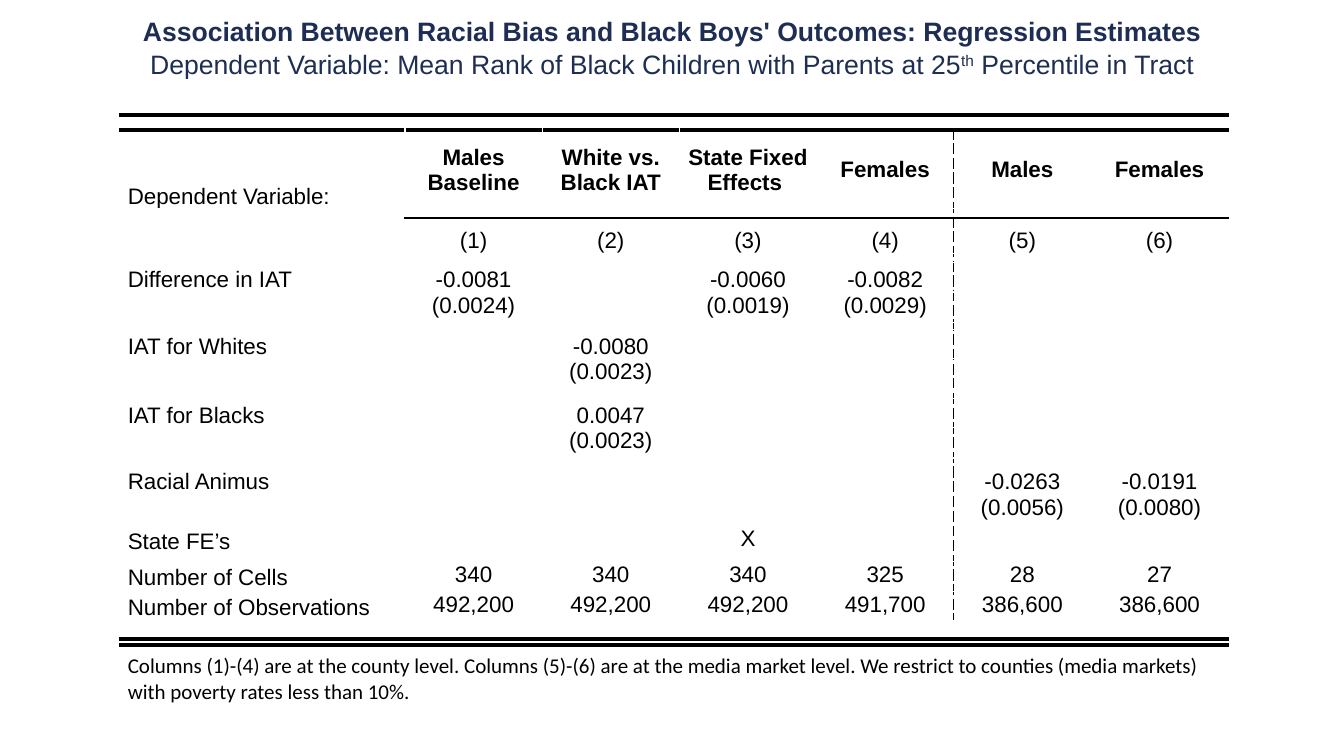
from lxml.etree import SubElement, fromstring
from pptx import Presentation
from pptx.dml.color import RGBColor
from pptx.enum.text import MSO_ANCHOR, MSO_AUTO_SIZE, PP_ALIGN
from pptx.oxml.ns import nsdecls, qn
from pptx.util import Pt

COLORS = {"navy": "1E2D53", "black": "000000", "white": "FFFFFF"}
TOP, MIDDLE, BOTTOM = MSO_ANCHOR.TOP, MSO_ANCHOR.MIDDLE, MSO_ANCHOR.BOTTOM

HEADING = "Association Between Racial Bias and Black Boys' Outcomes: Regression Estimates"
SUBHEADING = ["Dependent Variable: Mean Rank of Black Children with Parents at 25",
              "th", " Percentile in Tract"]
NOTE = ("Columns (1)-(4) are at the county level. Columns (5)-(6) are at the media market level. "
        "We restrict to counties (media markets) with poverty rates less than 10%.")

LABEL_WIDTH, VALUE_WIDTH = 203.8, 98
ESTIMATE, ERROR = 21.2, 21.6
HEADERS = ["Males\vBaseline", "White vs. Black IAT", "State Fixed Effects ",
           "Females", "Males", "Females"]
ROWS = [
    (25.2, "", TOP, {}, TOP),
    (10.8, "", TOP, {}, TOP),
    (56.2, "Dependent Variable:", BOTTOM, dict(enumerate(HEADERS, 1)), MIDDLE),
    (6.5, "", TOP, {}, TOP),
    (25.2, "", TOP, {n: f"({n})" for n in range(1, 7)}, BOTTOM),
    (6.5, "", TOP, {}, TOP),
    (ESTIMATE, "Difference in IAT", BOTTOM, {1: "-0.0081", 3: "-0.0060", 4: "-0.0082"}, BOTTOM),
    (ERROR, "", TOP, {1: "(0.0024)", 3: "(0.0019)", 4: "(0.0029)"}, TOP),
    (5, "", TOP, {}, TOP),
    (ESTIMATE, "IAT for Whites", BOTTOM, {2: "-0.0080"}, BOTTOM),
    (ERROR, "", TOP, {2: "(0.0023)"}, TOP),
    (6.5, "", TOP, {}, TOP),
    (ESTIMATE, "IAT for Blacks", BOTTOM, {2: "0.0047"}, BOTTOM),
    (ERROR, "", TOP, {2: "(0.0023)"}, TOP),
    (5, "", TOP, {}, TOP),
    (ESTIMATE, "Racial Animus", BOTTOM, {5: "-0.0263", 6: "-0.0191"}, BOTTOM),
    (ERROR, "", TOP, {5: "(0.0056)", 6: "(0.0080)"}, TOP),
    (ESTIMATE, "State FE’s", MIDDLE, {3: "X"}, TOP),
    (5, "", TOP, {}, TOP),
    (ESTIMATE, "Number of Cells", MIDDLE,
     {1: "340", 2: "340", 3: "340", 4: "325", 5: "28", 6: "27"}, TOP),
    (ESTIMATE, "Number of Observations", MIDDLE,
     {1: "492,200", 2: "492,200", 3: "492,200", 4: "491,700", 5: "386,600", 6: "386,600"}, TOP),
    (13, "", TOP, {}, TOP),
    (4.3, "", TOP, {}, TOP),
    (49, NOTE, MIDDLE, {}, TOP),
]
HEADER_ROW, RULE_ROW, NOTE_ROW = 2, 3, 23
FIRST_BODY, LAST_BODY = 2, 20
LAST_COUNTY_COLUMN = 4
THICK_RULES = (0, 21)
SPANS = {0: 3, 1: 3, 21: 3, 22: 6, 23: 6}


def apply_format(target, values):
    for name, value in values.items():
        setattr(target, name, value)


def format_run(run, color, **values):
    apply_format(run.font, values)
    run.font.color.rgb = RGBColor.from_string(COLORS[color])


def draw_borders(cell, borders):
    properties = cell._tc.get_or_add_tcPr()
    sides = [side for side in "LRTB" if side in borders]
    for position, side in enumerate(sides):
        color, width, dash = borders[side]
        properties.insert(position, fromstring(
            f'<a:ln{side} {nsdecls("a")} w="{Pt(width)}"><a:solidFill>'
            f'<a:srgbClr val="{COLORS[color]}"/></a:solidFill>'
            f'<a:prstDash val="{dash}"/></a:ln{side}>'))


def cell_borders(row, column):
    white, thin = ("white", 1, "solid"), ("black", 1, "solid")
    thick, divider = ("black", 3, "solid"), ("black", 1, "dash")
    borders = {}
    if column == 0:
        borders.update(L=white)
    if row in THICK_RULES:
        borders.update(B=thick)
    if row - 1 in THICK_RULES:
        borders.update(T=thick)
    if column > 0 and row == RULE_ROW:
        borders.update(B=thin)
    if column > 0 and row == RULE_ROW + 1:
        borders.update(T=thin)
    if FIRST_BODY <= row <= LAST_BODY:
        if column == LAST_COUNTY_COLUMN:
            borders.update(R=divider)
        if column == LAST_COUNTY_COLUMN + 1:
            borders.update(L=divider)
    return borders


def fill_cell(cell, text, anchor, row, column):
    cell.fill.solid()
    cell.fill.fore_color.rgb = RGBColor.from_string(COLORS["white"])
    side = 5.8 if column == 0 else 0.7
    upper = 0.7 if column and text else 0
    apply_format(cell, {"margin_left": Pt(side), "margin_right": Pt(side),
                        "margin_top": Pt(upper), "margin_bottom": Pt(0),
                        "vertical_anchor": anchor})
    paragraph = cell.text_frame.paragraphs[0]
    if not text:
        SubElement(paragraph._p, qn("a:endParaRPr")).set("sz", "300")
        return
    paragraph.text = text
    if column:
        paragraph.alignment = PP_ALIGN.CENTER
    elif row != NOTE_ROW:
        paragraph.line_spacing = 1.15
    font = ("Calibri", 15) if row == NOTE_ROW else ("Arial", 16)
    for run in paragraph.runs:
        format_run(run, "black", name=font[0], size=Pt(font[1]),
                   bold=row == HEADER_ROW and column > 0)


def add_estimates(slide, left, top):
    widths = [LABEL_WIDTH] + [VALUE_WIDTH] * len(HEADERS)
    estimates = slide.shapes.add_table(
        len(ROWS), len(widths), Pt(left), Pt(top),
        Pt(sum(widths)), Pt(sum(row[0] for row in ROWS))).table
    apply_format(estimates, {"first_row": False, "horz_banding": False})
    for column, width in enumerate(widths):
        estimates.columns[column].width = Pt(width)
    for row, (height, label, label_anchor, values, value_anchor) in enumerate(ROWS):
        estimates.rows[row].height = Pt(height)
        for column in range(len(widths)):
            cell = estimates.cell(row, column)
            text = values.get(column, "") if column else label
            fill_cell(cell, text, value_anchor if column else label_anchor, row, column)
            draw_borders(cell, cell_borders(row, column))
        if row in SPANS:
            estimates.cell(row, 0).merge(estimates.cell(row, SPANS[row]))


def add_heading(slide, left, top, width, height):
    title = slide.shapes.title
    apply_format(title, {"left": Pt(left), "top": Pt(top),
                         "width": Pt(width), "height": Pt(height)})
    frame = title.text_frame
    apply_format(frame, {"margin_left": Pt(7.2), "margin_right": Pt(7.2),
                         "margin_top": Pt(3.6), "margin_bottom": Pt(3.6),
                         "word_wrap": True, "vertical_anchor": TOP,
                         "auto_size": MSO_AUTO_SIZE.NONE})
    lines = [frame.paragraphs[0], frame.add_paragraph()]
    for line, parts, bold in zip(lines, ([HEADING], SUBHEADING), (True, False)):
        apply_format(line, {"alignment": PP_ALIGN.CENTER, "line_spacing": Pt(23),
                            "space_before": Pt(0)})
        for part in parts:
            run = line.add_run()
            run.text = part
            format_run(run, "navy", name="Arial", size=Pt(19), bold=bold)
            if part == "th":
                run._r.get_or_add_rPr().set("baseline", "30000")


def main():
    deck = Presentation()
    apply_format(deck, {"slide_width": Pt(960), "slide_height": Pt(540)})
    slide = deck.slides.add_slide(deck.slide_layouts[5])
    add_estimates(slide, 85.5, 57)
    add_heading(slide, 0, 7.2, 960, 53.3)
    deck.save("out.pptx")


if __name__ == "__main__":
    main()
